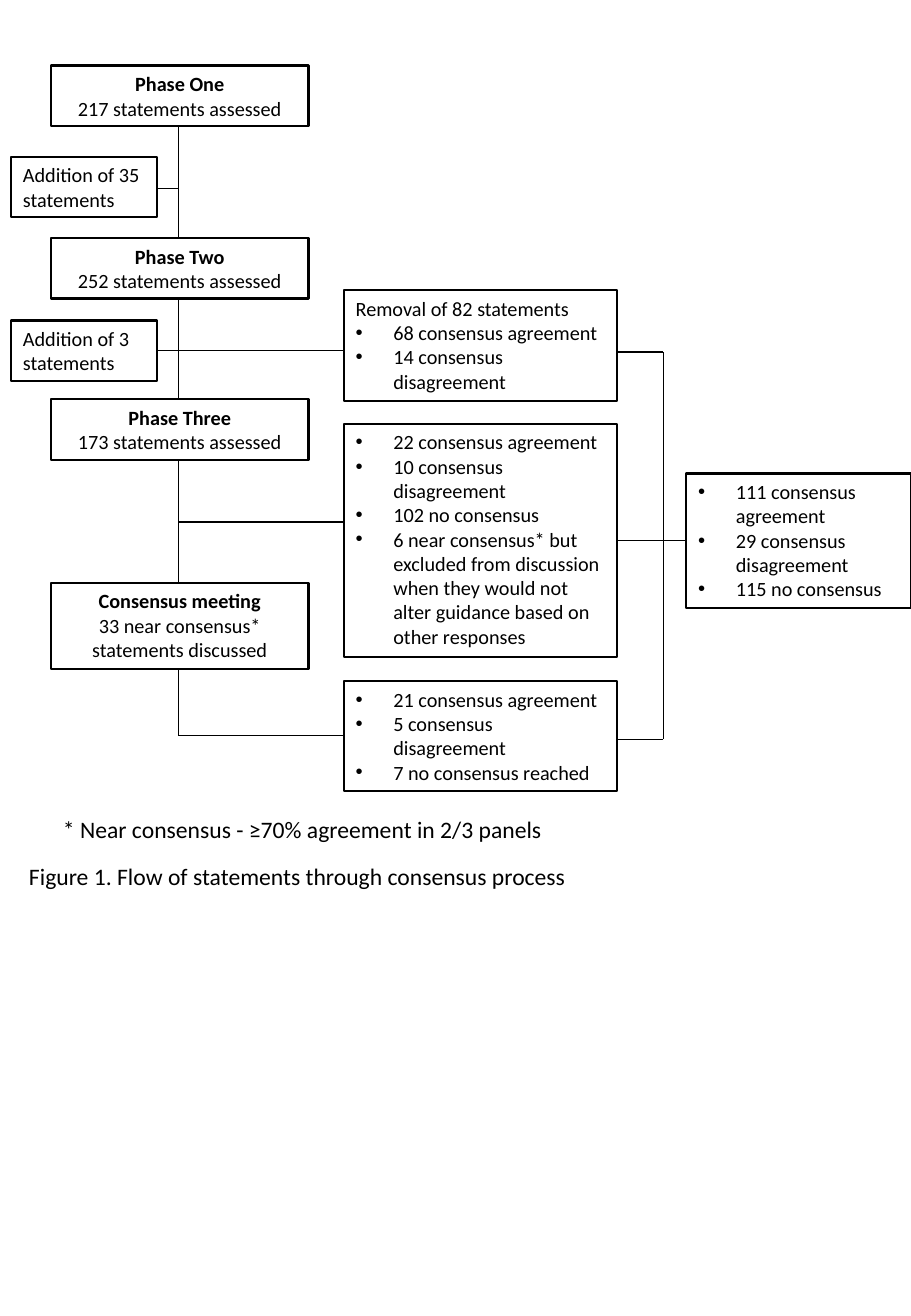
from lxml import etree
from pptx import Presentation
from pptx.dml.color import RGBColor
from pptx.enum.shapes import MSO_CONNECTOR, MSO_SHAPE
from pptx.enum.text import MSO_ANCHOR, PP_ALIGN
from pptx.oxml.ns import qn
from pptx.util import Inches, Pt

BLACK = RGBColor(0, 0, 0)
RECT = MSO_SHAPE.RECTANGLE
STRAIGHT = MSO_CONNECTOR.STRAIGHT
TOP = MSO_ANCHOR.TOP
LEFT, CENTER = PP_ALIGN.LEFT, PP_ALIGN.CENTER
FONT = "Calibri"

PHASE_X, PHASE_W = 0.42, 2.12
ADD_X, ADD_W = 0.09, 1.2
RESULT_X, RESULT_W = 2.83, 2.25
TOTAL_X, TOTAL_W = 5.65, 1.85
STEM_X = 1.47
JOIN_X = 5.46
ADD_END = ADD_X + ADD_W
RESULT_END = RESULT_X + RESULT_W

# top, height, heading, detail
PHASES = [
    (0.54, 0.5, "Phase One", "217 statements assessed"),
    (1.96, 0.5, "Phase Two", "252 statements assessed"),
    (3.29, 0.5, "Phase Three", "173 statements assessed"),
    (4.8, 0.71, "Consensus meeting", "33 near consensus* statements discussed"),
]
ADDED = [
    (1.29, "Addition of 35 statements"),
    (2.64, "Addition of 3 statements"),
]
# left, top, width, height, lead line, bullet items
LISTS = [
    (RESULT_X, 2.39, RESULT_W, 0.91, "Removal of 82 statements",
     ["68 consensus agreement", "14 consensus disagreement"]),
    (RESULT_X, 3.49, RESULT_W, 1.92, None,
     ["22 consensus agreement", "10 consensus disagreement",
      "102 no consensus",
      "6 near consensus* but excluded from discussion when they would not "
      "alter guidance based on other responses"]),
    (RESULT_X, 5.61, RESULT_W, 0.91, None,
     ["21 consensus agreement", "5 consensus disagreement",
      "7 no consensus reached"]),
    (TOTAL_X, 3.9, TOTAL_W, 1.11, None,
     ["111 consensus agreement", "29 consensus disagreement",
      "115 no consensus"]),
]
# x1, y1, x2, y2
LINKS = [
    (ADD_END, 1.55, STEM_X, 1.55),
    (ADD_END, 2.89, RESULT_X, 2.89),
    (STEM_X, 4.3, RESULT_X, 4.3),
    (STEM_X, 5.51, STEM_X, 6.06),
    (STEM_X, 6.06, RESULT_X, 6.06),
    (RESULT_END, 2.9, JOIN_X, 2.9),
    (RESULT_END, 6.09, JOIN_X, 6.09),
    (RESULT_END, 4.45, TOTAL_X, 4.45),
    (JOIN_X, 2.9, JOIN_X, 6.09),
]


def add_bullet(para):
    props = para._p.get_or_add_pPr()
    props.set("marL", str(Inches(0.31)))
    props.set("indent", str(-Inches(0.31)))
    etree.SubElement(props, qn("a:buFont")).set("typeface", "Arial")
    etree.SubElement(props, qn("a:buChar")).set("char", "•")


def write(frame, rows, size=12, align=LEFT):
    """Fill a frame with (text, style) rows; style is "bold", "bullet" or ""."""
    for i, (text, style) in enumerate(rows):
        para = frame.add_paragraph() if i else frame.paragraphs[0]
        para.text = text
        para.alignment = align
        if style == "bullet":
            add_bullet(para)
        font = para.font
        font.name, font.size = FONT, Pt(size)
        font.bold = style == "bold"
        font.color.rgb = BLACK


def add_box(slide, x, y, w, h, rows, align=LEFT):
    box = slide.shapes.add_shape(RECT, Inches(x), Inches(y), Inches(w), Inches(h))
    box.shadow.inherit = False
    box.fill.background()
    box.line.color.rgb = BLACK
    box.line.width = Pt(1.25)
    box.text_frame.word_wrap = True
    box.text_frame.vertical_anchor = TOP
    write(box.text_frame, rows, align=align)


def add_link(slide, x1, y1, x2, y2):
    link = slide.shapes.add_connector(
        STRAIGHT, Inches(x1), Inches(y1), Inches(x2), Inches(y2))
    link.line.color.rgb = BLACK
    link.line.width = Pt(0.75)
    etree.SubElement(link._element.spPr, qn("a:effectLst"))


def add_note(slide, x, y, w, text):
    note = slide.shapes.add_textbox(Inches(x), Inches(y), Inches(w), Inches(0.34))
    note.text_frame.word_wrap = True
    write(note.text_frame, [(text, "")], size=14)


def main():
    prs = Presentation()
    prs.slide_width, prs.slide_height = Inches(7.5), Inches(10.84)
    slide = prs.slides.add_slide(prs.slide_layouts[6])

    for y, h, head, detail in PHASES:
        add_box(slide, PHASE_X, y, PHASE_W, h,
                [(head, "bold"), (detail, "")], CENTER)
    for upper, lower in zip(PHASES, PHASES[1:]):
        add_link(slide, STEM_X, upper[0] + upper[1], STEM_X, lower[0])
    for y, text in ADDED:
        add_box(slide, ADD_X, y, ADD_W, 0.5, [(text, "")])
    for x, y, w, h, lead, items in LISTS:
        rows = [(lead, "")] if lead else []
        add_box(slide, x, y, w, h, rows + [(item, "bullet") for item in items])
    for link in LINKS:
        add_link(slide, *link)

    add_note(slide, 0.42, 6.66, 4.3,
             "* Near consensus - ≥70% agreement in 2/3 panels")
    add_note(slide, 0.14, 7.05, 5.45,
             "Figure 1. Flow of statements through consensus process")
    prs.save("out.pptx")


if __name__ == "__main__":
    main()
